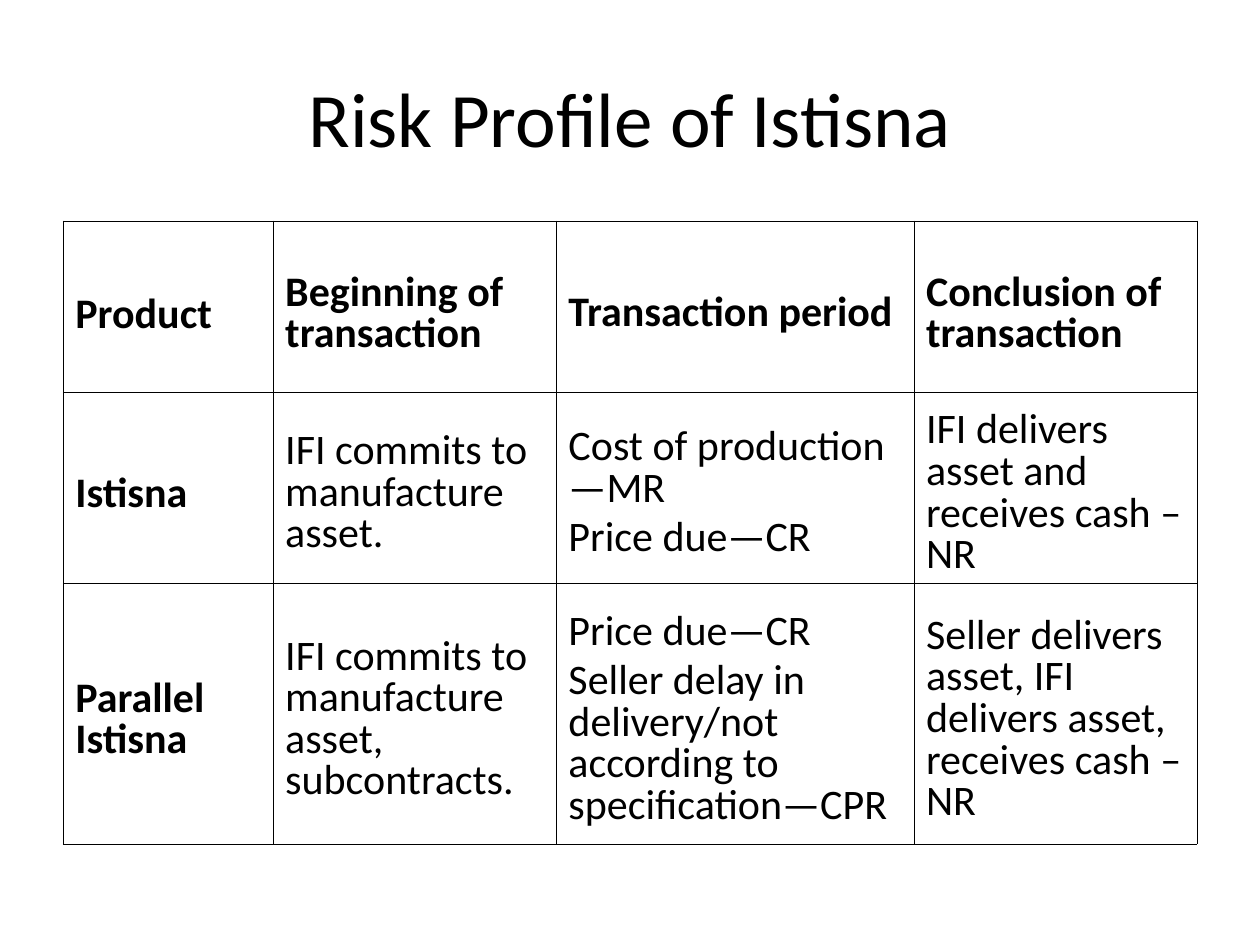
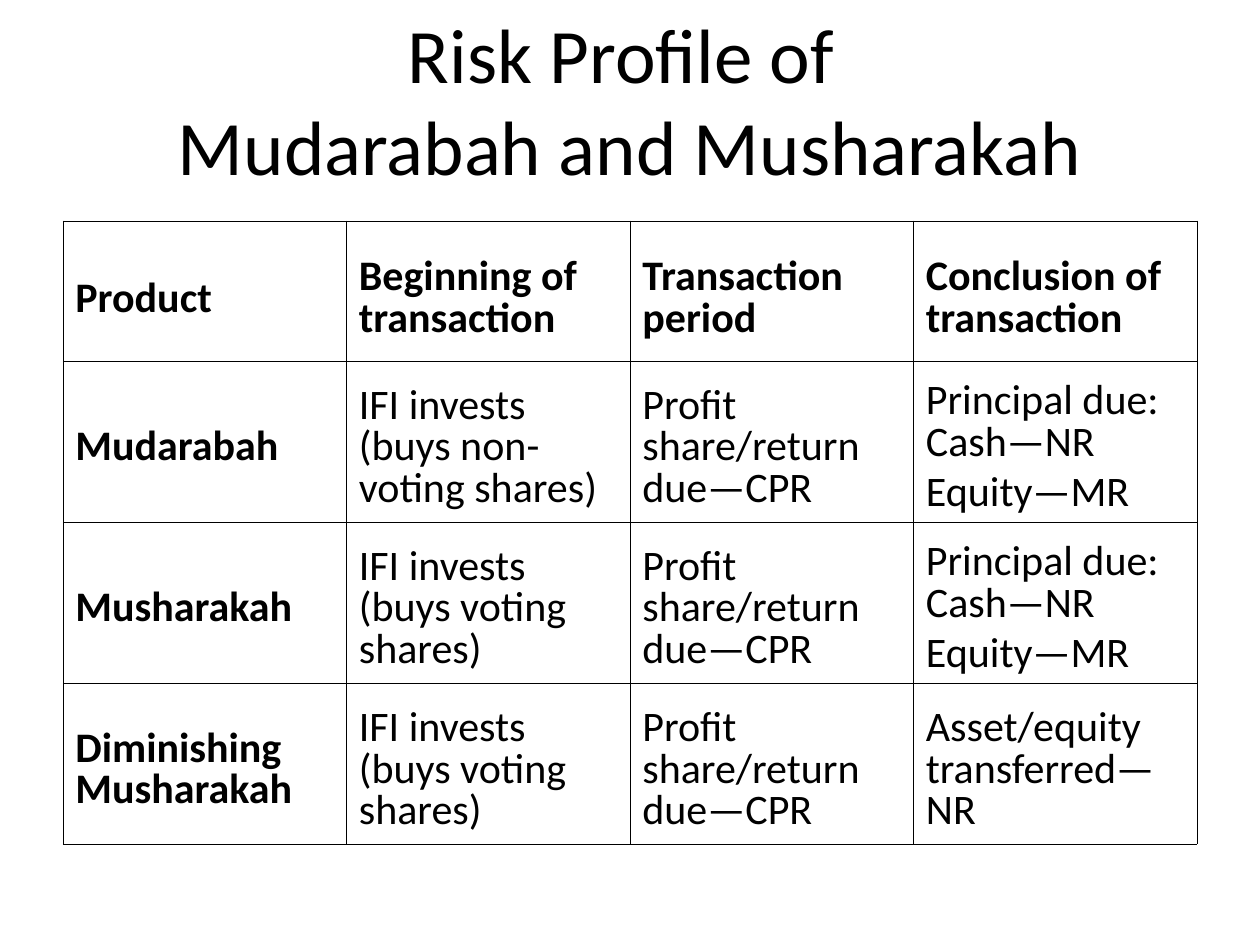
from pptx import Presentation
from pptx import util as u
from pptx.dml.color import RGBColor
from pptx.enum import text
from pptx.oxml import parse_xml
from pptx.oxml.ns import nsdecls

BLACK = RGBColor(0x00, 0x00, 0x00)
FONT = "Calibri"
TITLE_SIZE, CELL_SIZE = 44, 24
LEFT, WIDTH = 1.27, 22.86
TABLE_TOP = 4.45
OUTER, INNER = 0.23, 0.11  # border widths in points
HEADINGS = ["Product", "Beginning of transaction", "Transaction period",
            "Conclusion of transaction"]


class Deck:
    """Holds the shared style and the slide being built."""

    def __init__(self):
        self.prs = Presentation()
        self.prs.slide_width, self.prs.slide_height = u.Cm(25.4), u.Cm(19.05)
        self.s = None

    def new_slide(self):
        self.s = self.prs.slides.add_slide(self.prs.slide_layouts[6])

    def run(self, p, words, size, bold=False):
        r = p.add_run()
        r.text = words
        r.font.name, r.font.size, r.font.bold = FONT, u.Pt(size), bold
        r.font.color.rgb = BLACK

    def title(self, lines, top, height):
        sp = self.s.shapes.add_textbox(u.Cm(LEFT), u.Cm(top), u.Cm(WIDTH), u.Cm(height))
        tf = sp.text_frame
        tf.word_wrap = True
        tf.vertical_anchor = text.MSO_ANCHOR.MIDDLE
        p = tf.paragraphs[0]
        p.alignment = text.PP_ALIGN.CENTER
        for i, line in enumerate(lines):
            if i:
                p.add_line_break()
            self.run(p, line, TITLE_SIZE)

    def borders(self, cell, outer_sides):
        tcPr = cell._tc.get_or_add_tcPr()
        for side in "LRTB":
            width = u.Pt(OUTER if side in outer_sides else INNER)
            tcPr.append(parse_xml(
                f'<a:ln{side} {nsdecls("a")} w="{width}"><a:solidFill>'
                f'<a:srgbClr val="{BLACK}"/></a:solidFill></a:ln{side}>'))

    def cell(self, cell, words, bold, inset, gap):
        cell.fill.background()
        cell.vertical_anchor = text.MSO_ANCHOR.MIDDLE
        cell.margin_left = cell.margin_right = u.Cm(0.25)
        cell.margin_top, cell.margin_bottom = u.Cm(inset), u.Cm(0.13)
        tf = cell.text_frame
        for i, line in enumerate(words.split("\n")):
            p = tf.add_paragraph() if i else tf.paragraphs[0]
            p.line_spacing = 0.81
            if i:
                p.space_before = u.Pt(gap)
            self.run(p, line, CELL_SIZE, bold)

    def table(self, body, widths, heights, body_inset, gap):
        rows = [HEADINGS] + body
        frame = self.s.shapes.add_table(
            len(rows), len(widths), u.Cm(LEFT), u.Cm(TABLE_TOP),
            u.Cm(WIDTH), u.Cm(sum(heights)))
        tbl = frame.table
        tbl.first_row = tbl.horz_banding = False
        for column, width in zip(tbl.columns, widths):
            column.width = u.Cm(width)
        for row, height in zip(tbl.rows, heights):
            row.height = u.Cm(height)

        last_row, last_col = len(rows) - 1, len(widths) - 1
        for i, row in enumerate(rows):
            for j, words in enumerate(row):
                # Headings and product names are bold and sit slightly lower
                if i == 0:
                    inset = 0.46 if j else 0.51
                else:
                    inset = body_inset if j else 0.41
                edges = {"L": j == 0, "R": j == last_col, "T": i == 0, "B": i == last_row}
                c = tbl.cell(i, j)
                self.borders(c, [side for side, outer in edges.items() if outer])
                self.cell(c, words, i == 0 or j == 0, inset, gap)


def main():
    deck = Deck()

    # Istisna
    deck.new_slide()
    deck.title(["Risk Profile of Istisna"], 0.76, 3.18)
    deck.table([
        ["Istisna", "IFI commits to manufacture asset.",
         "Cost of production—MR\nPrice due—CR",
         "IFI delivers asset and receives cash –NR"],
        ["Parallel Istisna", "IFI commits to manufacture asset, subcontracts.",
         "Price due—CR\nSeller delay in delivery/not according to specification—CPR",
         "Seller delivers asset, IFI delivers asset, receives cash –NR"],
    ], [4.23, 5.71, 7.21, 5.71], [3.45, 3.86, 5.26], 0.38, 4.5)

    # Mudarabah and Musharakah
    profit = "Profit share/return due—CPR"
    principal = "Principal due: Cash—NR\nEquity—MR"
    voting = "IFI invests (buys voting shares)"
    deck.new_slide()
    deck.title(["Risk Profile of ", "Mudarabah and Musharakah"], 0.36, 3.25)
    deck.table([
        ["Mudarabah", "IFI invests (buys non-voting shares)", profit, principal],
        ["Musharakah", voting, profit, principal],
        ["Diminishing Musharakah", voting, profit, "Asset/equity transferred—NR"],
    ], [WIDTH / 4] * 4, [2.82] + [3.25] * 3, 0.41, 5)

    deck.prs.save("out.pptx")


if __name__ == "__main__":
    main()
